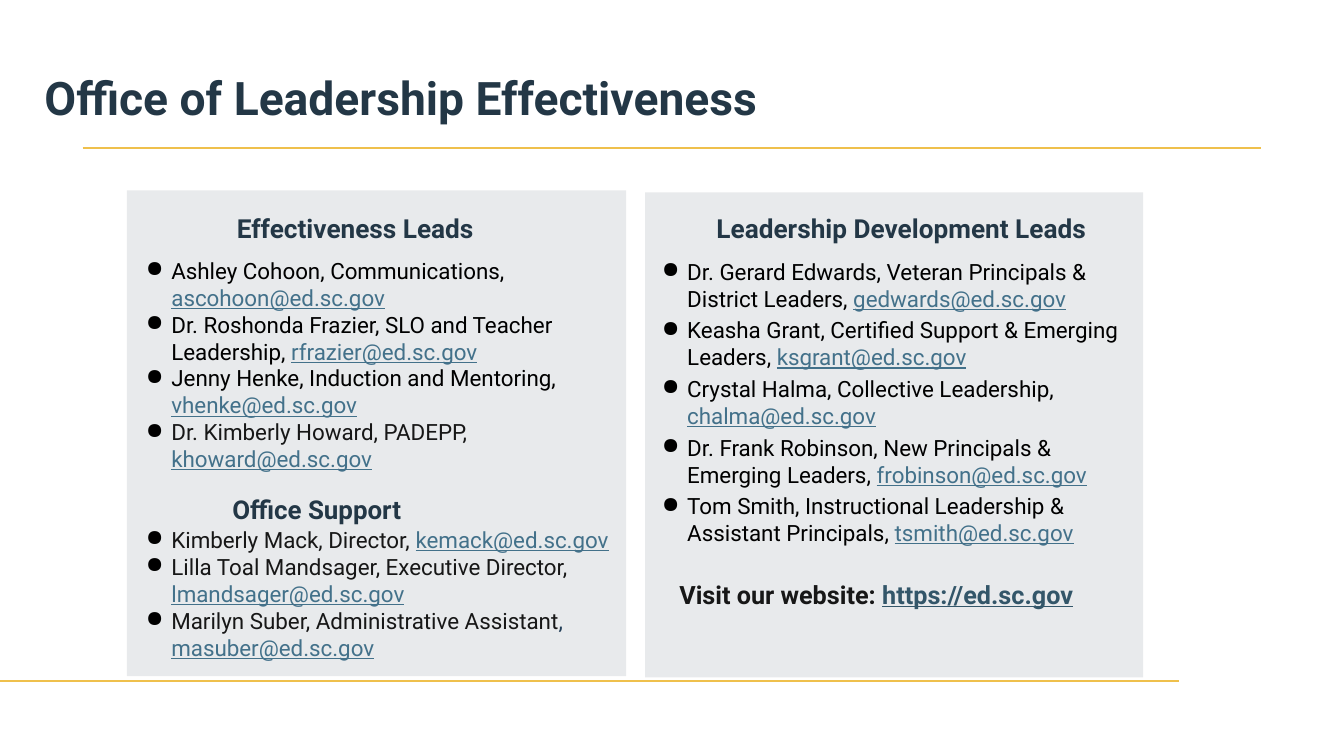
from lxml.etree import SubElement
from pptx import Presentation
from pptx.dml.color import RGBColor
from pptx.enum.shapes import MSO_CONNECTOR, MSO_SHAPE
from pptx.enum.text import PP_ALIGN
from pptx.oxml.ns import qn
from pptx.util import Cm, Pt

COLORS = {"navy": "233746", "gold": "EFC04C", "black": "000000", "ink": "171717",
          "comma": "233F58", "email": "43718A", "site": "335669"}
LINKS = {"email", "site"}
HANGING = 0.64

EFFECTIVENESS_LEADS = [
    [("Ashley Cohoon, Communications, ", "black"), ("ascohoon@ed.sc.gov", "email")],
    [("Dr. Roshonda Frazier, SLO and Teacher Leadership, ", "black"),
     ("rfrazier@ed.sc.gov", "email")],
    [("Jenny Henke, Induction and Mentoring, ", "black"), ("vhenke@ed.sc.gov", "email")],
    [("Dr. Kimberly Howard, PADEPP, ", "ink"), ("khoward@ed.sc.gov", "email")],
]
OFFICE_SUPPORT = [
    [("Kimberly Mack, Director, ", "ink"), ("kemack@ed.sc.gov", "email")],
    [("Lilla Toal Mandsager, Executive Director, ", "ink"), ("lmandsager@ed.sc.gov", "email")],
    [("Marilyn Suber, Administrative Assistant", "ink"), (", ", "comma"),
     ("masuber@ed.sc.gov", "email")],
]
DEVELOPMENT_LEADS = [
    [("Dr. Gerard Edwards, Veteran Principals & District Leaders, ", "black"),
     ("gedwards@ed.sc.gov", "email")],
    [("Keasha Grant, Certified Support & Emerging Leaders, ", "black"),
     ("ksgrant@ed.sc.gov", "email")],
    [("Crystal Halma, Collective Leadership, ", "black"), ("chalma@ed.sc.gov", "email")],
    [("Dr. Frank Robinson, New Principals & Emerging Leaders, ", "black"),
     ("frobinson@ed.sc.gov", "email")],
    [("Tom Smith, Instructional Leadership & Assistant Principals, ", "black"),
     ("tsmith@ed.sc.gov", "email")],
]
WEBSITE = [("Visit our website: ", "ink"), ("https://ed.sc.gov", "site")]


def rgb(color):
    return RGBColor.from_string(COLORS[color])


def add_bullet(paragraph, margin):
    props = paragraph._p.get_or_add_pPr()
    props.set("marL", str(Cm(margin)))
    props.set("indent", str(-Cm(HANGING)))
    bullet_color = SubElement(props, qn("a:buClr"))
    SubElement(bullet_color, qn("a:srgbClr"), val=COLORS["black"])
    SubElement(props, qn("a:buChar"), char="●")


def add_text(slide, box, lines, size, bold=False, margin=None, **layout):
    """Each line is a list of (text, color) runs; a margin makes it a bullet."""
    frame = slide.shapes.add_textbox(*map(Cm, box)).text_frame
    insets = dict.fromkeys(("margin_left", "margin_top", "margin_right", "margin_bottom"), 0)
    for name, value in {"word_wrap": True, **insets}.items():
        setattr(frame, name, value)
    for index, line in enumerate(lines):
        paragraph = frame.add_paragraph() if index else frame.paragraphs[0]
        if margin is not None:
            add_bullet(paragraph, margin)
        for name, value in layout.items():
            if index or name != "space_before":
                setattr(paragraph, name, value)
        for text, color in line:
            run = paragraph.add_run()
            run.text = text
            run.font.color.rgb = rgb(color)
            style = {"name": "Roboto", "size": Pt(size), "bold": bold,
                     "underline": color in LINKS}
            for name, value in style.items():
                setattr(run.font, name, value)


def add_heading(slide, box, text, size=18.7, **layout):
    add_text(slide, box, [[(text, "navy")]], size, bold=True,
             alignment=PP_ALIGN.CENTER, **layout)


def add_rule(slide, left, right, y):
    rule = slide.shapes.add_connector(MSO_CONNECTOR.STRAIGHT, Cm(left), Cm(y), Cm(right), Cm(y))
    rule.line.color.rgb = rgb("gold")
    rule.line.width = Pt(1.5)
    SubElement(rule._element.spPr, qn("a:effectLst"))


def add_panel(slide, box):
    panel = slide.shapes.add_shape(MSO_SHAPE.RECTANGLE, *map(Cm, box))
    panel.shadow.inherit = False
    panel.line.fill.background()
    panel.fill.solid()
    panel.fill.fore_color.rgb = rgb("navy")
    tint = panel._element.spPr.find(qn("a:solidFill")).find(qn("a:srgbClr"))
    SubElement(tint, qn("a:alpha"), val="10000")


def add_title(slide, left, top, width):
    add_text(slide, (left, top, width, 1.22), [[("Office of Leadership Effectiveness", "navy")]],
             33, bold=True, line_spacing=Pt(33.3))


def add_effectiveness_panel(slide, left, top, width, height):
    add_panel(slide, (left, top, width, height))
    add_heading(slide, (left + 1.78, top + 0.79, 7.95, 0.61), "Effectiveness Leads",
                line_spacing=Pt(16))
    add_heading(slide, (left + 0.97, top + 7.65, 7.62, 0.8), "Office Support", size=18.5)
    for offset, people in ((1.68, EFFECTIVENESS_LEADS), (8.46, OFFICE_SUPPORT)):
        add_text(slide, (left + 0.48, top + offset, width, 3.5), people, 16, margin=HANGING)


def add_development_panel(slide, left, top, width, height):
    add_panel(slide, (left, top, width, height))
    add_heading(slide, (left + 1.44, top + 0.74, 10.03, 0.61), "Leadership Development Leads",
                line_spacing=Pt(16))
    add_text(slide, (left + 0.02, top + 1.65, 12.24, 7.4), DEVELOPMENT_LEADS, 16,
             margin=1.04, space_before=Pt(3.5))
    add_text(slide, (left + 0.86, top + 9.74, 11.4, 0.8), [WEBSITE], 18, bold=True)


def main():
    deck = Presentation()
    deck.slide_width, deck.slide_height = Cm(33.87), Cm(19.05)
    slide = deck.slides.add_slide(deck.slide_layouts[6])
    add_title(slide, 1.12, 1.98, 31)
    add_rule(slide, 2.08, 31.78, 3.74)
    add_effectiveness_panel(slide, 3.2, 4.8, 12.58, 12.24)
    add_development_panel(slide, 16.26, 4.85, 12.55, 12.22)
    add_rule(slide, 0, 29.7, 17.16)
    deck.save("out.pptx")


if __name__ == "__main__":
    main()
